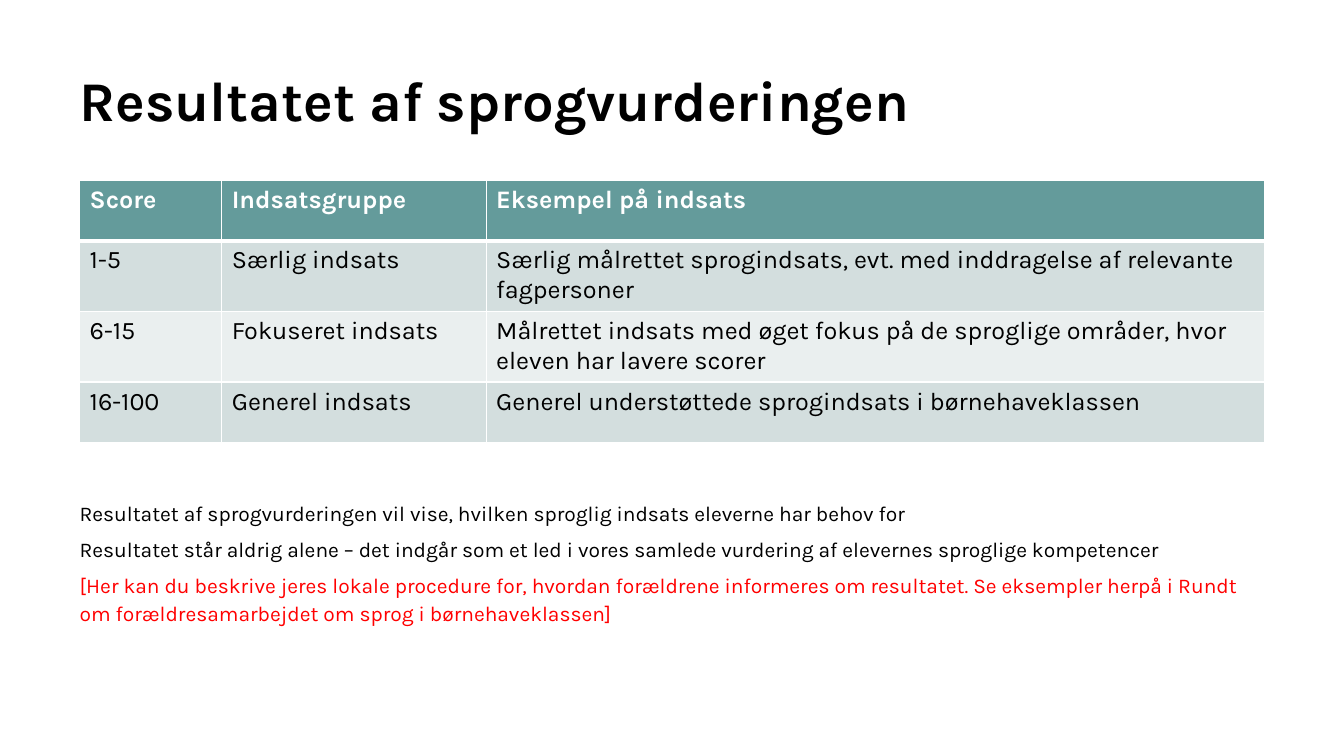
from dataclasses import dataclass

from lxml import etree
from pptx import Presentation
from pptx import util as u
from pptx.dml import color
from pptx.enum import text
from pptx.oxml import ns

FONT = "Karla"
COLORS = {
    "ink": "000000",
    "prompt": "FF0000",
    "white": "FFFFFF",
    "header": "649B9B",
    "band_dark": "D3DEDE",
    "band_light": "EAEFEF",
}
LEFT, WIDTH = 56.9, 846.7
COLUMN_WIDTHS = (101.5, 188.9, 556.3)
ROW_HEIGHT = 43


@dataclass(frozen=True)
class Line:
    wording: str
    color: str = "ink"


@dataclass(frozen=True)
class TextBlock:
    top: float
    height: float
    size: float
    spacing: float
    lines: tuple[Line, ...]
    before: float = 0
    bold: bool = False


@dataclass(frozen=True)
class ScoreRow:
    cells: tuple[str, str, str]
    fill: str
    color: str = "ink"
    bold: bool = False
    top_rule: float = 1
    bottom_rule: float = 1


HEADING = TextBlock(
    51.1, 90.7, 40, 0.93, (Line("Resultatet af sprogvurderingen"),), bold=True
)
EXPLANATION = TextBlock(
    355.7, 127.4, 15, 1.1,
    (
        Line("Resultatet af sprogvurderingen vil vise, hvilken sproglig indsats "
             "eleverne har behov for"),
        Line("Resultatet står aldrig alene – det indgår som et led i vores samlede "
             "vurdering af elevernes sproglige kompetencer"),
        Line("[Her kan du beskrive jeres lokale procedure for, hvordan forældrene "
             "informeres om resultatet. Se eksempler herpå i Rundt om "
             "forældresamarbejdet om sprog i børnehaveklassen]", "prompt"),
    ),
    before=6,
)
SCORE_ROWS = (
    ScoreRow(("Score", "Indsatsgruppe", "Eksempel på indsats"),
             "header", "white", bold=True, bottom_rule=3),
    ScoreRow(("1-5", "Særlig indsats",
              "Særlig målrettet sprogindsats, evt. med inddragelse af relevante "
              "fagpersoner"), "band_dark", top_rule=3),
    ScoreRow(("6-15", "Fokuseret indsats",
              "Målrettet indsats med øget fokus på de sproglige områder, hvor "
              "eleven har lavere scorer"), "band_light"),
    ScoreRow(("16-100", "Generel indsats",
              "Generel understøttede sprogindsats i børnehaveklassen"), "band_dark"),
)


def rgb(name: str) -> color.RGBColor:
    return color.RGBColor.from_string(COLORS[name])


def style_runs(paragraph, size: float, ink: str, bold: bool) -> None:
    for run in paragraph.runs:
        run.font.name = FONT
        run.font.size = u.Pt(size)
        run.font.bold = bold
        run.font.color.rgb = rgb(ink)


def draw_text(slide, block: TextBlock) -> None:
    box = slide.shapes.add_textbox(
        u.Pt(LEFT), u.Pt(block.top), u.Pt(WIDTH), u.Pt(block.height)
    )
    frame = box.text_frame
    frame.word_wrap = True
    frame.vertical_anchor = text.MSO_ANCHOR.TOP
    frame.margin_left = frame.margin_right = u.Pt(0)
    frame.margin_top = frame.margin_bottom = u.Pt(0)
    frame.text = "\n".join(line.wording for line in block.lines)
    for paragraph, line in zip(frame.paragraphs, block.lines):
        paragraph.line_spacing = block.spacing
        paragraph.space_before = u.Pt(block.before)
        style_runs(paragraph, block.size, line.color, block.bold)


def rule_cell(cell, row: ScoreRow) -> None:
    properties = cell._tc.get_or_add_tcPr()
    rules = {"lnL": 1, "lnR": 1, "lnT": row.top_rule, "lnB": row.bottom_rule}
    for side, points in rules.items():
        rule = etree.SubElement(
            properties, ns.qn(f"a:{side}"), w=str(int(u.Pt(points)))
        )
        fill = etree.SubElement(rule, ns.qn("a:solidFill"))
        etree.SubElement(fill, ns.qn("a:srgbClr"), val=COLORS["white"])


def draw_scores(slide, rows: tuple[ScoreRow, ...]) -> None:
    scores = slide.shapes.add_table(
        len(rows), len(COLUMN_WIDTHS), u.Pt(LEFT), u.Pt(129),
        u.Pt(WIDTH), u.Pt(ROW_HEIGHT * len(rows))
    ).table
    for column, width in zip(scores.columns, COLUMN_WIDTHS):
        column.width = u.Pt(width)
    for index, row in enumerate(rows):
        scores.rows[index].height = u.Pt(ROW_HEIGHT)
        for cell, wording in zip(scores.rows[index].cells, row.cells):
            rule_cell(cell, row)
            cell.fill.solid()
            cell.fill.fore_color.rgb = rgb(row.fill)
            cell.text_frame.text = wording
            style_runs(cell.text_frame.paragraphs[0], 18, row.color, row.bold)


def main() -> None:
    deck = Presentation()
    deck.slide_width, deck.slide_height = u.Pt(960), u.Pt(540)
    slide = deck.slides.add_slide(deck.slide_layouts[6])
    slide.background.fill.solid()
    slide.background.fill.fore_color.rgb = rgb("white")
    draw_text(slide, HEADING)
    draw_text(slide, EXPLANATION)
    draw_scores(slide, SCORE_ROWS)
    deck.save("out.pptx")


if __name__ == "__main__":
    main()
